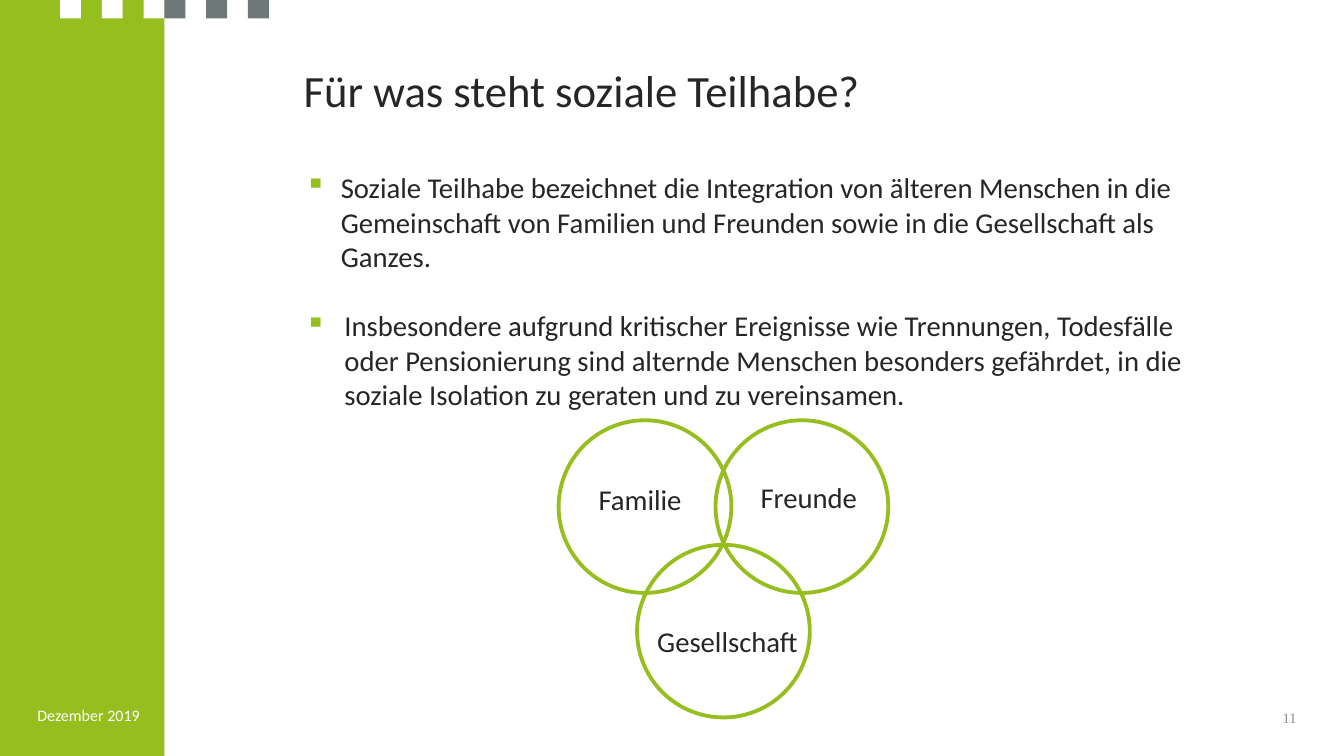
from dataclasses import dataclass

from lxml.etree import SubElement
from pptx import Presentation
from pptx.dml.color import RGBColor
from pptx.enum.shapes import MSO_SHAPE
from pptx.enum.text import MSO_ANCHOR, MSO_AUTO_SIZE, PP_ALIGN
from pptx.oxml.ns import qn
from pptx.util import Cm, Pt

# Content
TITLE = "Für was steht soziale Teilhabe?"
DATE = "Dezember 2019"
PAGE_NUMBER = "11"
BULLETS = [  # text, hanging indent in cm
    ("Soziale Teilhabe bezeichnet die Integration von älteren Menschen in die "
     "Gemeinschaft von Familien und Freunden sowie in die Gesellschaft als Ganzes.", 0.99),
    ("Insbesondere aufgrund kritischer Ereignisse wie Trennungen, Todesfälle oder "
     "Pensionierung sind alternde Menschen besonders gefährdet, in die soziale "
     "Isolation zu geraten und zu vereinsamen.", 1.09),
]
CIRCLES = [  # label, column and row of the circle, label box in cm
    ("Gesellschaft", 0, 1, (18.01, 17.22, 5, 1.22)),
    ("Familie", -1, 0, (16.38, 13.26, 4.37, 1.22)),
    ("Freunde", 1, 0, (20.88, 13.21, 4.37, 1.22)),
]


@dataclass(frozen=True)
class Theme:
    green: str = "96BE1E"
    grey: str = "6E7878"
    white: str = "FFFFFF"
    text: str = "262626"
    muted: str = "8C8C8C"
    font: str = "Calibri"
    number_font: str = "Times New Roman"
    title_size: float = 35.2
    body_size: float = 22.6
    date_size: float = 12.6
    number_size: float = 11.3


THEME = Theme()

# Layout in cm
WIDTH, HEIGHT = 37.34, 21.01
BAND_WIDTH = 4.57
TILE_WIDTH, TILE_HEIGHT, TILE_PITCH = 0.58, 0.51, 1.16
TILE_ROWS = [(1.67, THEME.white), (BAND_WIDTH, THEME.grey)]
TILES_PER_ROW = 3
DIAMETER = 4.8
CIRCLES_CENTRE, CIRCLES_TOP = 20.1, 11.68
COLUMN_STEP, ROW_STEP = 2.18, 3.46


def place(shape, box):
    shape.left, shape.top, shape.width, shape.height = map(Cm, box)


def style_text(text_frame, size, color=THEME.text, font=THEME.font, align=PP_ALIGN.LEFT):
    for paragraph in text_frame.paragraphs:
        paragraph.alignment = align
        for run in paragraph.runs:
            run.font.size = Pt(size)
            run.font.name = font
            run.font.color.rgb = RGBColor.from_string(color)


def add_text(slide, text, box, size, **style):
    text_box = slide.shapes.add_textbox(*map(Cm, box))
    text_frame = text_box.text_frame
    text_frame.word_wrap = True
    text_frame.text = text
    style_text(text_frame, size, **style)
    return text_frame


def add_plain_shape(slide, kind, box, fill=None, line=None):
    shape = slide.shapes.add_shape(kind, *map(Cm, box))
    shape.shadow.inherit = False
    if fill:
        shape.fill.solid()
        shape.fill.fore_color.rgb = RGBColor.from_string(fill)
    else:
        shape.fill.background()
    if line:
        shape.line.color.rgb = RGBColor.from_string(line)
        shape.line.width = Pt(3)
    else:
        shape.line.fill.background()


def add_bullet(paragraph, indent):
    properties = paragraph._p.get_or_add_pPr()
    properties.set("marL", str(Cm(indent)))
    properties.set("indent", str(-Cm(indent)))
    bullet_color = SubElement(properties, qn("a:buClr"))
    SubElement(bullet_color, qn("a:srgbClr"), val=THEME.green)
    SubElement(properties, qn("a:buChar"), char="▪")


def add_decoration(slide):
    add_plain_shape(slide, MSO_SHAPE.RECTANGLE, (0, 0, BAND_WIDTH, HEIGHT), THEME.green)
    for start, color in TILE_ROWS:
        for index in range(TILES_PER_ROW):
            box = (start + index * TILE_PITCH, 0, TILE_WIDTH, TILE_HEIGHT)
            add_plain_shape(slide, MSO_SHAPE.RECTANGLE, box, color)


def add_title(slide):
    title = slide.shapes.title
    place(title, (8.18, 1.63, 23.88, 1.75))
    title.text_frame.text = TITLE
    title.text_frame.auto_size = MSO_AUTO_SIZE.NONE
    title.text_frame.vertical_anchor = MSO_ANCHOR.TOP
    style_text(title.text_frame, THEME.title_size)


def add_body(slide):
    text = "\n".join(text for text, _ in BULLETS)
    text_frame = add_text(slide, text, (8.23, 4.6, 25.2, 7.77), THEME.body_size)
    for index, (paragraph, (_, indent)) in enumerate(zip(text_frame.paragraphs, BULLETS)):
        add_bullet(paragraph, indent)
        if index:
            paragraph.space_before = Pt(27.5)


def add_circles(slide):
    for _, column, row, _ in CIRCLES:
        left = CIRCLES_CENTRE + column * COLUMN_STEP - DIAMETER / 2
        top = CIRCLES_TOP + row * ROW_STEP
        box = (left, top, DIAMETER, DIAMETER)
        add_plain_shape(slide, MSO_SHAPE.OVAL, box, line=THEME.green)
    for label, _, _, box in CIRCLES:
        add_text(slide, label, box, THEME.body_size)


def add_footer(slide):
    add_text(slide, DATE, (0.79, 19.48, 4.19, 1.12), THEME.date_size, color=THEME.white)
    number = add_text(slide, PAGE_NUMBER, (27.86, 19.38, 8.41, 1.12), THEME.number_size,
                      color=THEME.muted, font=THEME.number_font, align=PP_ALIGN.RIGHT)
    number.vertical_anchor = MSO_ANCHOR.MIDDLE


def main():
    presentation = Presentation()
    presentation.slide_width, presentation.slide_height = Cm(WIDTH), Cm(HEIGHT)
    slide = presentation.slides.add_slide(presentation.slide_layouts[5])
    add_decoration(slide)
    add_title(slide)
    add_body(slide)
    add_circles(slide)
    add_footer(slide)
    presentation.save("out.pptx")


if __name__ == "__main__":
    main()
